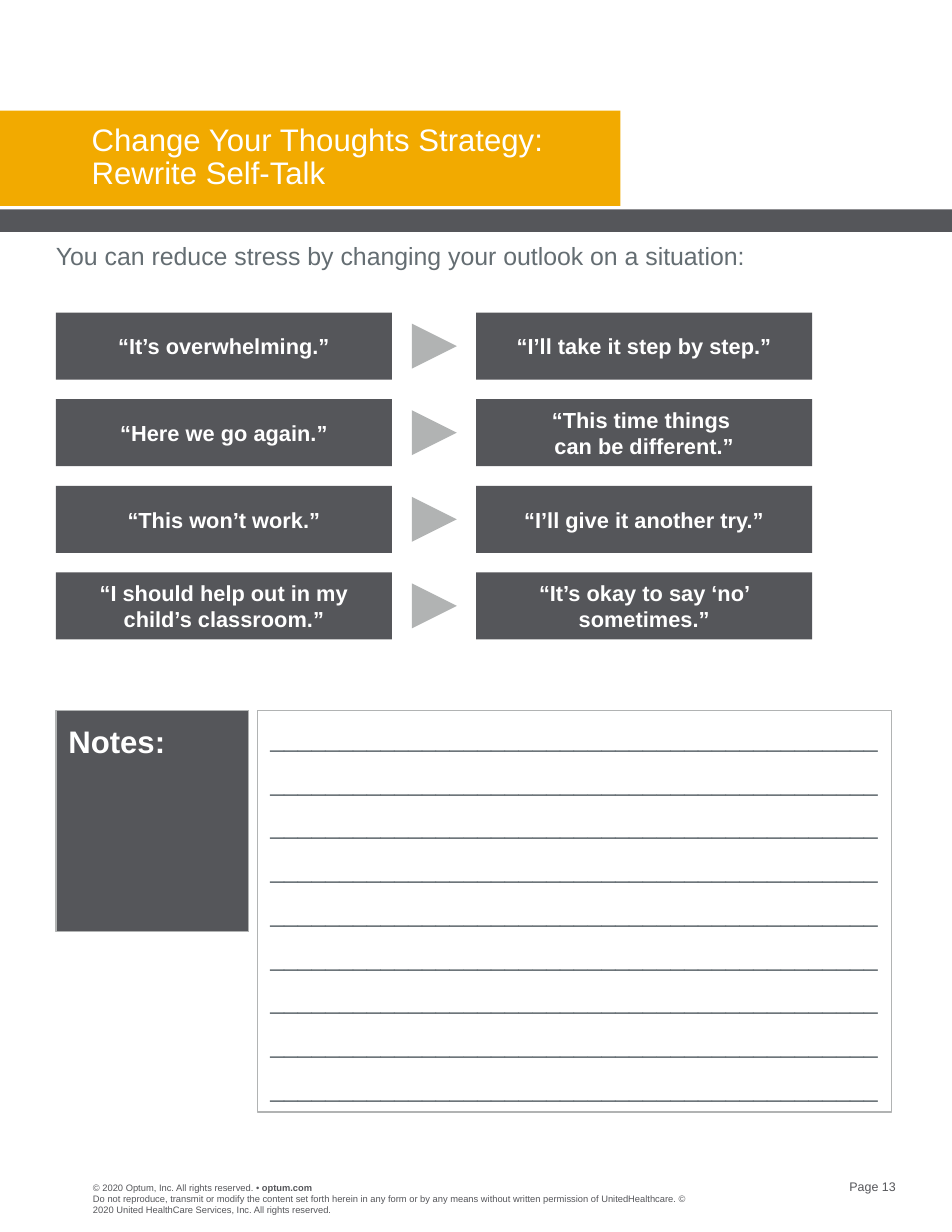
import pptx
import pptx.util
import pptx.dml.color
import pptx.enum.shapes
import pptx.enum.text
from pptx.util import Cm

SHAPE = pptx.enum.shapes.MSO_SHAPE
ALIGN = pptx.enum.text.PP_ALIGN
ANCHOR = pptx.enum.text.MSO_ANCHOR

DARK, AMBER, SILVER, SLATE, WHITE = "55565A", "F2AA00", "B1B3B3", "646D72", "FFFFFF"

THOUGHTS = [
    ("“It’s overwhelming.”", "“I’ll take it step by step.”"),
    ("“Here we go again.”", "“This time things \vcan be different.”"),
    ("“This won’t work.”", "“I’ll give it another try.”"),
    ("“I should help out in my child’s classroom.”", "“It’s okay to say ‘no’ sometimes.”"),
]
ROWS_TOP, ROW_PITCH, ROW_HEIGHT = 7.09, 1.964, 1.52
ARROW_SIZE = 1.02
NOTE_LINES = 9


def rgb(color):
    return pptx.dml.color.RGBColor.from_string(color)


def style_font(font, size, color, bold=False):
    font.name = "Arial"
    font.size = pptx.util.Pt(size)
    font.bold = bold
    font.color.rgb = rgb(color)


def fill_text(shape, lines, size, color, bold=False, align=ALIGN.LEFT,
              anchor=ANCHOR.TOP, inset=0.0, after=0, spacing=None):
    frame = shape.text_frame
    frame.word_wrap = True
    frame.vertical_anchor = anchor
    frame.margin_left = frame.margin_top = Cm(inset)
    frame.margin_right = frame.margin_bottom = Cm(inset)
    frame.text = "\n".join(lines)
    for paragraph in frame.paragraphs:
        paragraph.alignment = align
        paragraph.space_after = pptx.util.Pt(after)
        if spacing:
            paragraph.line_spacing = spacing
        style_font(paragraph.font, size, color, bold)


def add_text(slide, left, top, width, height, text, size, color, **options):
    box = slide.shapes.add_textbox(Cm(left), Cm(top), Cm(width), Cm(height))
    fill_text(box, [text], size, color, **options)
    return box


def add_block(slide, left, top, width, height, fill=None, line=None, kind=SHAPE.RECTANGLE):
    block = slide.shapes.add_shape(kind, Cm(left), Cm(top), Cm(width), Cm(height))
    block.shadow.inherit = False
    if fill:
        block.fill.solid()
        block.fill.fore_color.rgb = rgb(fill)
    else:
        block.fill.background()
    if line:
        block.line.color.rgb = rgb(line)
        block.line.width = pptx.util.Pt(0.75)
    else:
        block.line.fill.background()
    return block


def add_thought(slide, left, top, text):
    block = add_block(slide, left, top, 7.62, ROW_HEIGHT, DARK)
    fill_text(block, [text], 14, WHITE, bold=True, align=ALIGN.CENTER,
              anchor=ANCHOR.MIDDLE, inset=0.15)


def add_header(slide):
    add_block(slide, 0, 2.51, 14.07, 2.16, AMBER)
    add_block(slide, 0, 4.75, 21.59, 0.51, DARK)
    add_text(slide, 2.08, 2.82, 11.43, 1.55,
             "Change Your Thoughts Strategy: Rewrite Self-Talk", 20, WHITE, spacing=0.9)
    add_text(slide, 1.27, 5.46, 19.02, 0.69,
             "You can reduce stress by changing your outlook on a situation:", 16, SLATE)


def add_thoughts(slide):
    for row, (before, after) in enumerate(THOUGHTS):
        top = ROWS_TOP + row * ROW_PITCH
        add_thought(slide, 1.27, top, before)
        add_thought(slide, 10.8, top, after)
        arrow = add_block(slide, 9.34, top + (ROW_HEIGHT - ARROW_SIZE) / 2,
                          ARROW_SIZE, ARROW_SIZE, SILVER, kind=SHAPE.FLOWCHART_EXTRACT)
        arrow.rotation = 90


def add_notes_area(slide):
    label = add_block(slide, 1.27, 16.11, 4.37, 5.02, DARK, SILVER)
    fill_text(label, ["Notes:"], 20, WHITE, bold=True, inset=0.28)
    ruled = add_block(slide, 5.85, 16.11, 14.37, 9.11, line=SILVER)
    fill_text(ruled, ["_" * 44] * NOTE_LINES, 16, SLATE, inset=0.28, after=8.9)


def add_footer(slide):
    rights = add_text(slide, 2.11, 26.8, 8, 0.25,
                      "© 2020 Optum, Inc. All rights reserved. • ", 6, DARK)
    site = rights.text_frame.paragraphs[0].add_run()
    site.text = "optum.com"
    site.font.bold = True
    add_text(slide, 2.11, 27.05, 13.46, 0.51,
             "Do not reproduce, transmit or modify the content set forth herein in any form "
             "or by any means without written permission of UnitedHealthcare. "
             "© 2020 United HealthCare Services, Inc. All rights reserved.", 6, DARK)
    add_text(slide, 18.26, 26.75, 2.06, 0.33, "Page 13", 8, DARK, align=ALIGN.RIGHT)


def main():
    deck = pptx.Presentation()
    deck.slide_width, deck.slide_height = Cm(21.59), Cm(27.94)
    slide = deck.slides.add_slide(deck.slide_layouts[6])
    add_header(slide)
    add_thoughts(slide)
    add_notes_area(slide)
    add_footer(slide)
    deck.save("out.pptx")


if __name__ == "__main__":
    main()
